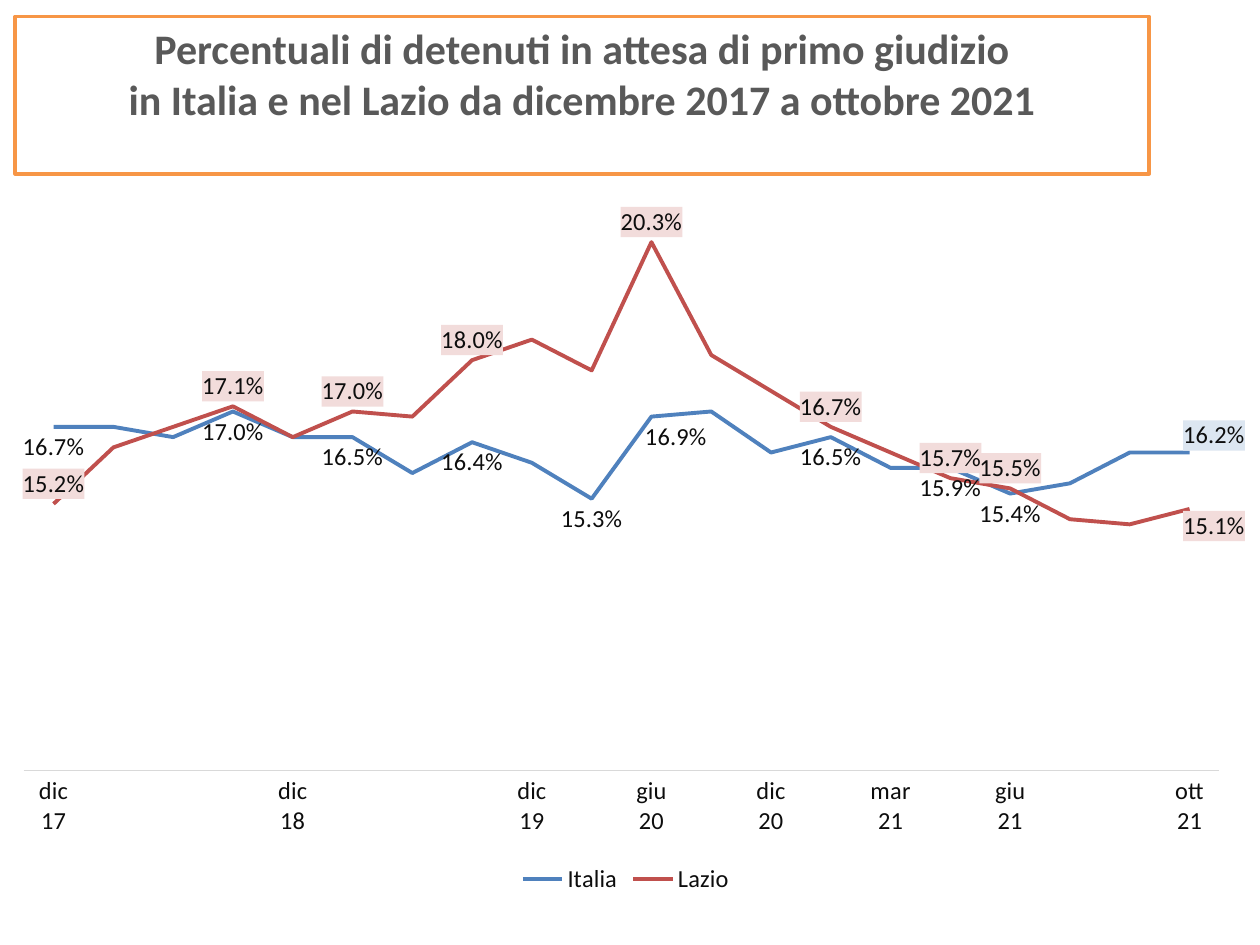
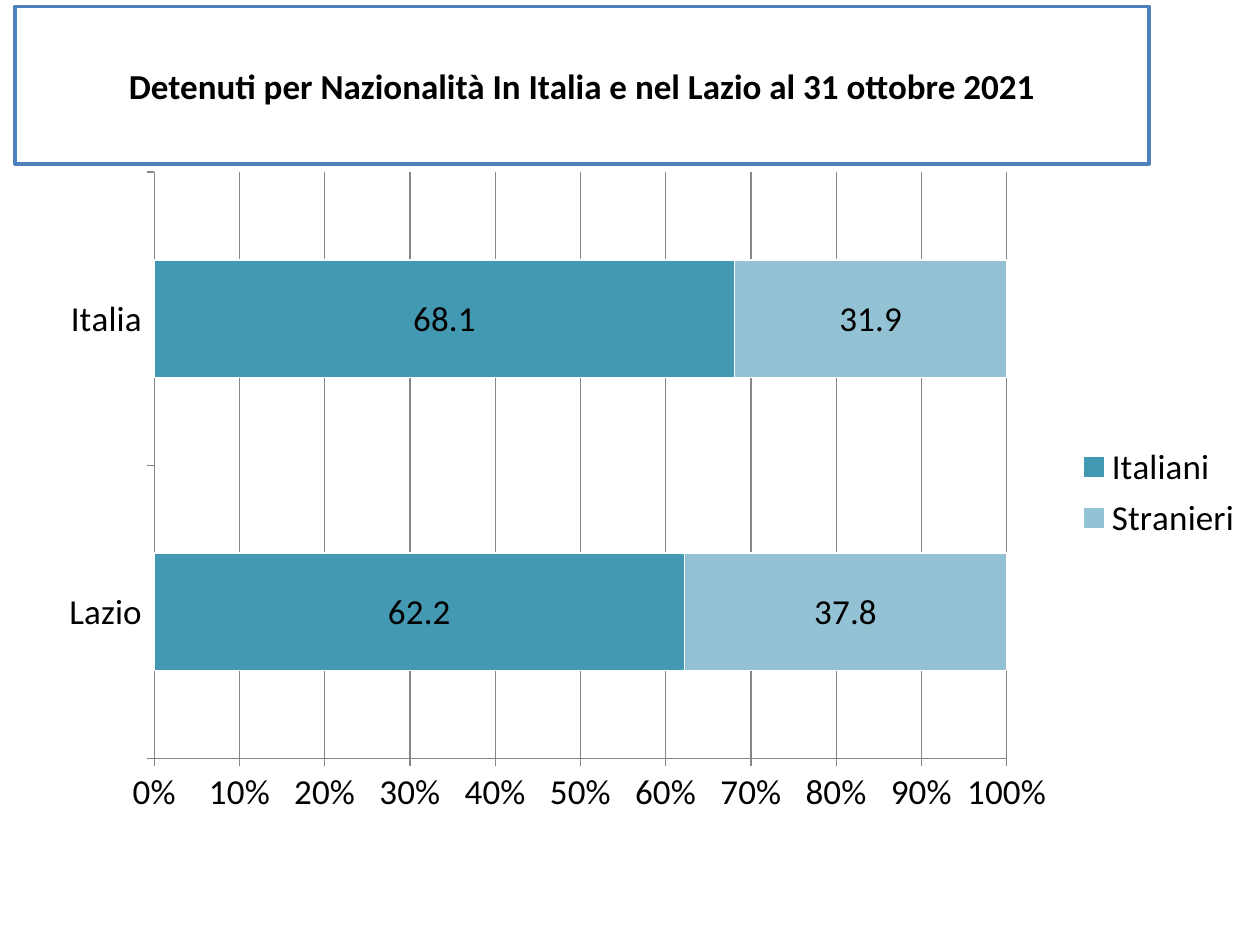
from lxml import etree
from pptx import Presentation
from pptx.chart.data import CategoryChartData
from pptx.dml.color import RGBColor
from pptx.enum.chart import (
    XL_CHART_TYPE as ChartType,
    XL_LABEL_POSITION as LabelPosition,
    XL_LEGEND_POSITION as LegendPosition,
    XL_TICK_MARK as TickMark,
)
from pptx.enum.text import MSO_ANCHOR, MSO_AUTO_SIZE, PP_ALIGN
from pptx.oxml import parse_xml
from pptx.oxml.ns import nsdecls, qn
from pptx.util import Inches, Pt

FONT = "Calibri"
WHITE, BLACK, DARK, GREY = "FFFFFF", "000000", "0D0D0D", "595959"
BLUE, RED, ORANGE = "4F81BD", "C0504D", "F79646"
PALE_BLUE, PALE_RED = "DCE6F1", "F2DCDB"
TEAL, PALE_TEAL = "4399B1", "93C2D4"
AXIS_GREY, GRID_GREY = "D9D9D9", "868686"
PERCENT = "0.0%"

# Quarterly figures, latest first
MONTHS = ["ott 21", "", "", "giu 21", "", "mar 21", "", "dic 20", "", "giu 20",
          "", "dic 19", "", "", "", "dic 18", "", "", "", "dic 17"]
ITALIA = [0.162, 0.162, 0.156, 0.154, 0.159, 0.159, 0.165, 0.162, 0.17, 0.169,
          0.153, 0.16, 0.164, 0.158, 0.165, 0.165, 0.17, 0.165, 0.167, 0.167]
LAZIO = [0.151, 0.148, 0.149, 0.155, 0.157, 0.162, 0.167, 0.174, 0.181, 0.203,
         0.178, 0.184, 0.18, 0.169, 0.17, 0.165, 0.171, 0.167, 0.163, 0.152]
UNLABELLED = {1, 2, 5, 7, 8, 11, 13, 15, 17, 18}


def color(value):
    return RGBColor.from_string(value)


def set_font(font, size, value, bold=None):
    font.name, font.size, font.bold = FONT, Pt(size), bold
    font.color.rgb = color(value)


def set_line(line, value, width):
    line.color.rgb = color(value)
    line.width = Pt(width)


def add_title_slide(presentation, text, box, size, text_color, border, anchor):
    """Add a slide whose title sits in a bordered white box."""
    slide = presentation.slides.add_slide(presentation.slide_layouts[5])
    title = slide.shapes.title
    title.left, title.top, title.width, title.height = map(Inches, box)
    title.fill.solid()
    title.fill.fore_color.rgb = color(WHITE)
    set_line(title.line, border, 2)
    frame = title.text_frame
    frame.text = text
    frame.word_wrap = True
    frame.auto_size = MSO_AUTO_SIZE.NONE
    frame.vertical_anchor = anchor
    paragraph = frame.paragraphs[0]
    paragraph.alignment = PP_ALIGN.CENTER
    set_font(paragraph.font, size, text_color, True)
    return slide


def add_chart(slide, chart_type, box, categories, series, plot_box, size,
              text_color, legend_position):
    """Add a chart with a fixed inner plot area, given as fractions."""
    data = CategoryChartData()
    data.categories = categories
    for name, values in series:
        data.add_series(name, values)
    chart = slide.shapes.add_chart(chart_type, *map(Inches, box), data).chart
    chart.has_title = False
    set_font(chart.font, size, text_color)
    chart.has_legend = True
    chart.legend.position = legend_position
    chart.legend.include_in_layout = False
    chart.plots[0].vary_by_categories = False

    plot_area = chart._chartSpace.chart.plotArea
    for old_layout in plot_area.findall(qn("c:layout")):
        plot_area.remove(old_layout)
    sizes = "".join(f'<c:{tag} val="{value}"/>' for tag, value in zip("xywh", plot_box))
    plot_area.insert(0, parse_xml(
        f'<c:layout {nsdecls("c")}><c:manualLayout><c:layoutTarget val="inner"/>'
        f'<c:xMode val="edge"/><c:yMode val="edge"/>{sizes}'
        '</c:manualLayout></c:layout>'))
    return chart


def show_labels(series, position, number_format, size, text_color):
    labels = series.data_labels
    labels.show_value = True
    labels.number_format = number_format
    labels.number_format_is_linked = False
    labels.position = position
    set_font(labels.font, size, text_color)
    return labels._element


def label_fill(value):
    if not value:
        return ""
    return (f'<c:spPr {nsdecls("c", "a")}><a:solidFill><a:srgbClr val="{value}"/>'
            '</a:solidFill></c:spPr>')


def adjust_labels(labels, hidden, moved, position):
    """Hide some point labels; shift others by (x, y, fill)."""
    text_xml = etree.tostring(labels.find(qn("c:txPr")), encoding="unicode")
    shows = "".join(
        f'<c:show{part} val="{int(part == "Val")}"/>'
        for part in ("LegendKey", "Val", "CatName", "SerName", "Percent", "BubbleSize"))
    for place, index in enumerate(sorted(hidden | moved.keys())):
        if index in moved:
            x, y, fill = moved[index]
            body = (f'<c:layout><c:manualLayout><c:x val="{x}"/><c:y val="{y}"/>'
                    '</c:manualLayout></c:layout>'
                    f'<c:numFmt formatCode="{PERCENT}" sourceLinked="0"/>'
                    f'{label_fill(fill)}{text_xml}<c:dLblPos val="{position}"/>{shows}')
        else:
            body = '<c:delete val="1"/>'
        labels.insert(place, parse_xml(
            f'<c:dLbl {nsdecls("c")}><c:idx val="{index}"/>{body}</c:dLbl>'))


def add_trend_chart(slide, box):
    chart = add_chart(slide, ChartType.LINE, box, MONTHS,
                      [("Italia", ITALIA), ("Lazio", LAZIO)],
                      (0.007, 0, 0.979, 0.827), 14, DARK, LegendPosition.BOTTOM)
    set_font(chart.legend.font, 14, DARK)

    # Axes: time runs left to right, values stay hidden
    months = chart.category_axis
    months.reverse_order = True
    months.major_tick_mark = TickMark.NONE
    set_line(months.format.line, AXIS_GREY, 0.75)
    set_font(months.tick_labels.font, 14, DARK)
    shares = chart.value_axis
    shares.minimum_scale, shares.maximum_scale = 0.1, 0.22
    shares.has_major_gridlines = False
    shares.visible = False

    # Lines and their labels
    styles = [
        (BLUE, LabelPosition.BELOW, "b", None, UNLABELLED,
         {0: (0.02, -0.05, PALE_BLUE), 9: (0.02, 0, None)}),
        (RED, LabelPosition.ABOVE, "t", PALE_RED, UNLABELLED | {10},
         {0: (0.02, 0.05, PALE_RED)}),
    ]
    for series, style in zip(chart.plots[0].series, styles):
        line_color, position, position_code, fill, hidden, moved = style
        series.smooth = False
        set_line(series.format.line, line_color, 2.25)
        labels = show_labels(series, position, PERCENT, 14, DARK)
        if fill:
            labels.find(qn("c:txPr")).addprevious(parse_xml(label_fill(fill)))
        adjust_labels(labels, hidden, moved, position_code)


def add_nationality_chart(slide, box):
    chart = add_chart(slide, ChartType.BAR_STACKED_100, box, ["Lazio", "Italia"],
                      [("Italiani", [62.2, 68.1]), ("Stranieri", [37.8, 31.9])],
                      (0.09, 0.02, 0.704, 0.878), 20, BLACK, LegendPosition.RIGHT)
    set_font(chart.legend.font, 20, BLACK)

    # Axes and grid
    for axis in (chart.category_axis, chart.value_axis):
        axis.major_tick_mark = TickMark.OUTSIDE
        set_line(axis.format.line, GRID_GREY, 0.75)
        set_font(axis.tick_labels.font, 20, BLACK)
    shares = chart.value_axis
    shares.has_major_gridlines = True
    set_line(shares.major_gridlines.format.line, GRID_GREY, 0.75)
    shares.tick_labels.number_format = "0%"
    shares.tick_labels.number_format_is_linked = False

    # Bars
    plot = chart.plots[0]
    plot.gap_width, plot.overlap = 150, 100
    for series, fill in zip(plot.series, (TEAL, PALE_TEAL)):
        series.format.fill.solid()
        series.format.fill.fore_color.rgb = color(fill)
        set_line(series.format.line, WHITE, 0.75)
        show_labels(series, LabelPosition.CENTER, "0.0", 20, BLACK)


def main():
    presentation = Presentation()
    presentation.slide_width, presentation.slide_height = Inches(10), Inches(7.5)

    slide = add_title_slide(
        presentation,
        "Percentuali di detenuti in attesa di primo giudizio\v"
        "in Italia e nel Lazio da dicembre 2017 a ottobre 2021",
        (0.12, 0.13, 9, 1.25), 24, GREY, ORANGE, MSO_ANCHOR.TOP)
    add_trend_chart(slide, (0.12, 1.23, 9.76, 5.91))

    slide = add_title_slide(
        presentation,
        "Detenuti per Nazionalità In Italia e nel Lazio al 31 ottobre 2021",
        (0.12, 0.05, 9, 1.25), 20, BLACK, BLUE, MSO_ANCHOR.MIDDLE)
    add_nationality_chart(slide, (0.36, 1.26, 9.61, 5.3))

    presentation.save("out.pptx")


if __name__ == "__main__":
    main()
